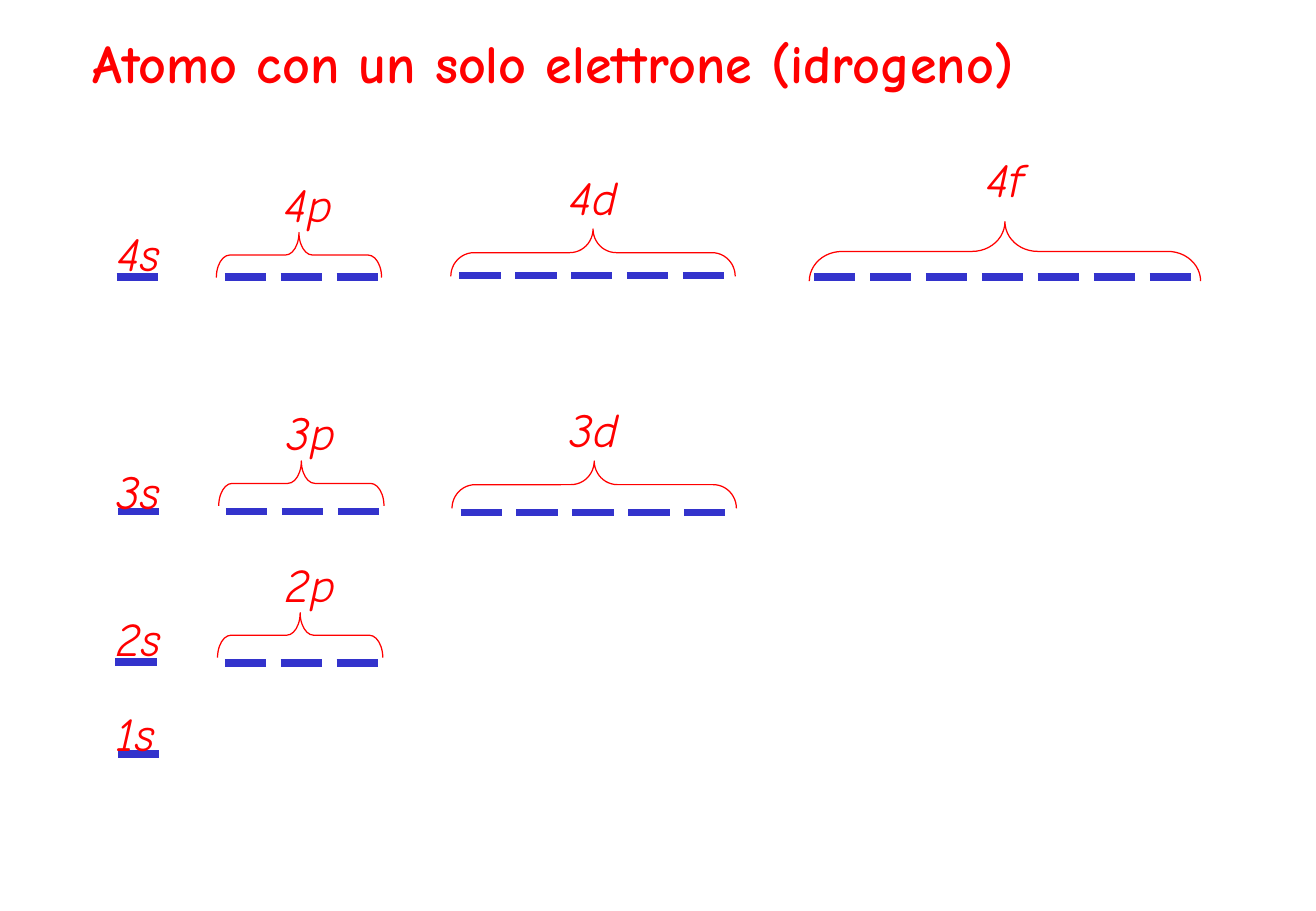
from dataclasses import dataclass

from lxml import etree
from pptx import Presentation
from pptx.dml.color import RGBColor
from pptx.enum.shapes import MSO_CONNECTOR, MSO_SHAPE
from pptx.enum.text import MSO_ANCHOR, MSO_AUTO_SIZE, PP_ALIGN
from pptx.oxml.ns import qn
from pptx.shapes.shapetree import GroupShapes
from pptx.text.text import TextFrame
from pptx.util import Inches, Pt

STRAIGHT = MSO_CONNECTOR.STRAIGHT
LEFT_BRACE = MSO_SHAPE.LEFT_BRACE
TOP = MSO_ANCHOR.TOP
FIT_SHAPE = MSO_AUTO_SIZE.SHAPE_TO_FIT_TEXT
LEFT = PP_ALIGN.LEFT

FONT = "Comic Neue"
RED = "FF0000"
BLUE = "3333CC"
ORBITAL_WIDTH = 0.34
ORBITAL_PITCH = 0.46
LABEL_HEIGHT = 0.57


@dataclass(frozen=True)
class Brace:
    depth: float
    span: float
    curve: float


@dataclass(frozen=True)
class Kind:
    orbitals: int
    label_width: float
    brace: Brace | None = None


@dataclass(frozen=True)
class Subshell:
    name: str
    left: float
    level: float
    label: tuple[float, float]
    brace_center: tuple[float, float] = (0, 0)


KINDS = {
    "s": Kind(1, 0.63),
    "p": Kind(3, 0.65, Brace(0.37, 1.36, 0.3)),
    "d": Kind(5, 0.67, Brace(0.39, 2.34, 0.49)),
    "f": Kind(7, 0.66, Brace(0.49, 3.22, 0.55)),
}

SUBSHELLS = [
    Subshell("1s", 0.97, 6.21, (0.86, 5.75)),
    Subshell("2s", 0.95, 5.45, (0.86, 4.97)),
    Subshell("3s", 0.97, 4.21, (0.86, 3.76)),
    Subshell("4s", 0.96, 2.28, (0.87, 1.8)),
    Subshell("2p", 1.85, 5.46, (2.25, 4.52), (2.47, 5.23)),
    Subshell("3p", 1.86, 4.21, (2.26, 3.27), (2.48, 3.98)),
    Subshell("4p", 1.85, 2.28, (2.24, 1.39), (2.46, 2.1)),
    Subshell("3d", 3.79, 4.22, (4.59, 3.25), (4.89, 3.99)),
    Subshell("4d", 3.78, 2.27, (4.59, 1.34), (4.88, 2.08)),
    Subshell("4f", 6.7, 2.28, (8.02, 1.19), (8.27, 2.07)),
]


def color(value: str) -> RGBColor:
    return RGBColor.from_string(value)


def write(frame: TextFrame, text: str, size: float, bold: bool, italic: bool) -> None:
    frame.text = text
    frame.word_wrap = False
    frame.auto_size = FIT_SHAPE
    frame.vertical_anchor = TOP
    para = frame.paragraphs[0]
    para.alignment = LEFT
    para.font.name = FONT
    para.font.size = Pt(size)
    para.font.bold = bold
    para.font.italic = italic
    para.font.color.rgb = color(RED)


def draw_orbital(shapes: GroupShapes, left: float, level: float) -> None:
    line = shapes.add_connector(
        STRAIGHT, Inches(left), Inches(level),
        Inches(left + ORBITAL_WIDTH), Inches(level))
    line.line.color.rgb = color(BLUE)
    line.line.width = Pt(4.5)
    etree.SubElement(line._element.spPr, qn("a:effectLst"))


def draw_brace(shapes: GroupShapes, brace: Brace, center: tuple[float, float]) -> None:
    x, y = center
    shape = shapes.add_shape(
        LEFT_BRACE, Inches(x - brace.depth / 2), Inches(y - brace.span / 2),
        Inches(brace.depth), Inches(brace.span))
    shape.rotation = 90
    shape.adjustments[0] = brace.curve
    shape.shadow.inherit = False
    shape.fill.background()
    shape.line.color.rgb = color(RED)
    shape.line.width = Pt(0.75)


def draw_subshell(shapes: GroupShapes, subshell: Subshell) -> None:
    kind = KINDS[subshell.name[-1]]
    for index in range(kind.orbitals):
        draw_orbital(shapes, subshell.left + index * ORBITAL_PITCH, subshell.level)
    if kind.brace:
        draw_brace(shapes, kind.brace, subshell.brace_center)
    left, top = subshell.label
    box = shapes.add_textbox(
        Inches(left), Inches(top), Inches(kind.label_width), Inches(LABEL_HEIGHT))
    write(box.text_frame, subshell.name, 28, bold=False, italic=True)


def main() -> None:
    deck = Presentation()
    deck.slide_width = Inches(10.83)
    deck.slide_height = Inches(7.5)
    page = deck.slides.add_slide(deck.slide_layouts.get_by_name("Title Only"))

    title = page.shapes.title
    title.left, title.top = Inches(0.66), Inches(0.19)
    title.width, title.height = Inches(8.56), Inches(0.63)
    write(title.text_frame, "Atomo con un solo elettrone (idrogeno)", 32,
          bold=True, italic=False)

    for subshell in SUBSHELLS:
        draw_subshell(page.shapes.add_group_shape().shapes, subshell)
    deck.save("out.pptx")


if __name__ == "__main__":
    main()
